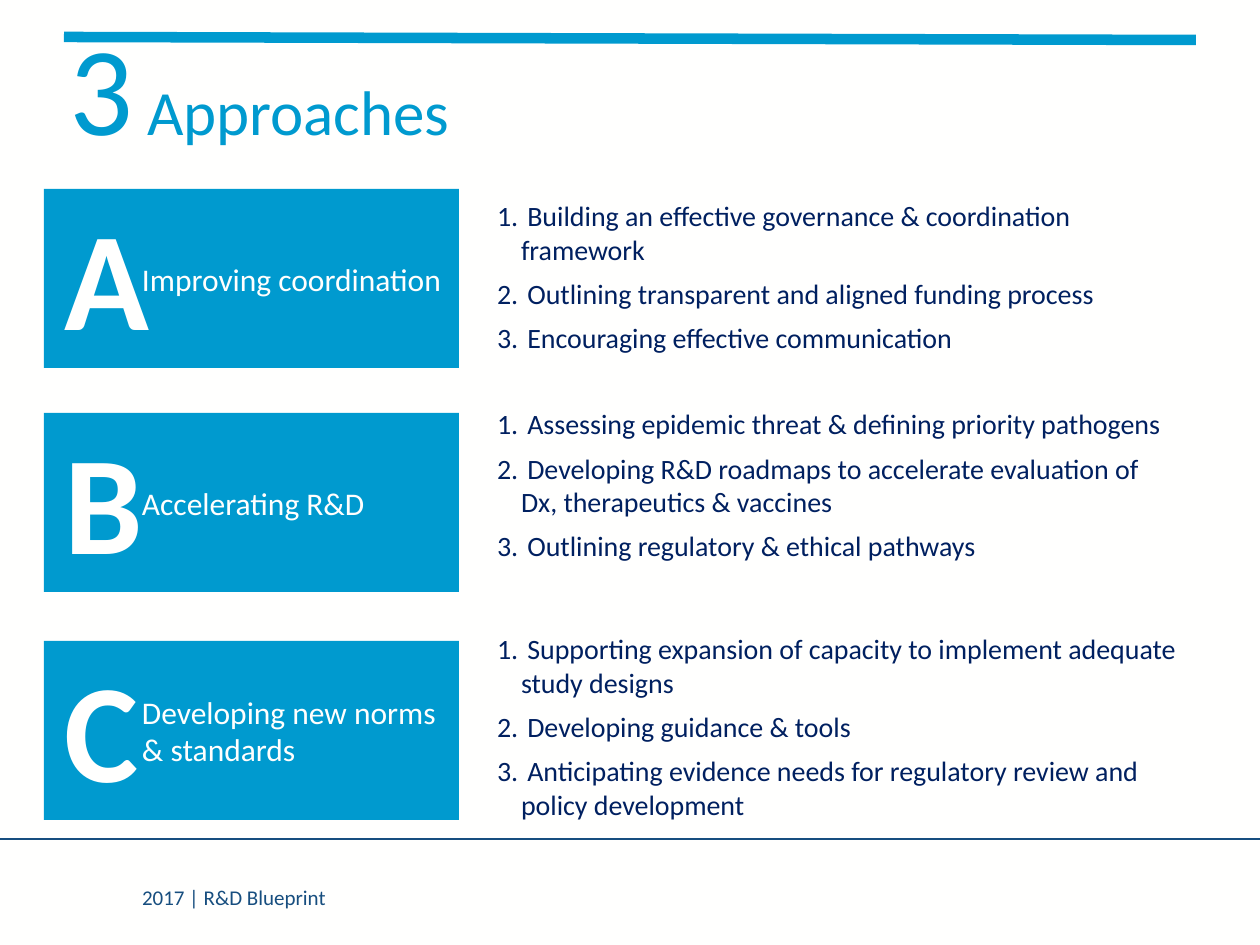
from lxml.etree import SubElement
from pptx import Presentation
from pptx.dml.color import RGBColor
from pptx.enum.shapes import MSO_CONNECTOR as Line, MSO_SHAPE as Shape
from pptx.enum.text import MSO_ANCHOR as Anchor, MSO_AUTO_SIZE as Fit, PP_ALIGN as Align
from pptx.oxml.ns import qn
from pptx.util import Emu, Pt

SCALE = 914400 / 126
BLUE, NAVY, DEEP, WHITE = "009ACF", "002060", "174E7F", "FFFFFE"
FONT = "Calibri"

ROWS = [
    # letter, label, card top, list top, list width, list items
    ("A", "Improving coordination", 189, 193, 685, [
        "Building an effective governance & coordination framework",
        "Outlining transparent and aligned funding process",
        "Encouraging effective communication"]),
    ("B", "Accelerating R&D", 413, 401, 685, [
        "Assessing epidemic threat & defining priority pathogens",
        "Developing R&D roadmaps to accelerate evaluation of Dx, therapeutics & vaccines",
        "Outlining regulatory & ethical pathways"]),
    ("C", "Developing new norms & standards", 641, 626, 710, [
        "Supporting expansion of capacity to implement adequate study designs",
        "Developing guidance & tools",
        "Anticipating evidence needs for regulatory review and policy development"]),
]


def px(n):
    return Emu(round(n * SCALE))


def color(code):
    return RGBColor.from_string(code)


def place(shape, x, y, w, h):
    shape.left, shape.top, shape.width, shape.height = map(px, (x, y, w, h))


def number(para):
    """Give the paragraph a hanging automatic number."""
    props = para._p.get_or_add_pPr()
    props.set("marL", str(px(24)))
    props.set("indent", str(-px(24)))
    SubElement(props, qn("a:buFont"), typeface="+mj-lt")
    SubElement(props, qn("a:buAutoNum"), type="arabicPeriod")


def write(shape, paras, size=16, ink=WHITE, bold=False, anchor=Anchor.TOP,
          inset=(12, 6, 12, 6), after=0, listed=False):
    """Fill the shape; each paragraph is a list of (text, size or None) runs."""
    frame = shape.text_frame
    frame.word_wrap, frame.auto_size = True, Fit.NONE
    frame.vertical_anchor = anchor
    (frame.margin_left, frame.margin_top,
     frame.margin_right, frame.margin_bottom) = map(px, inset)
    for i, runs in enumerate(paras):
        para = frame.add_paragraph() if i else frame.paragraphs[0]
        para.alignment = Align.LEFT
        para.space_before, para.space_after = Pt(0), Pt(after)
        if listed:
            number(para)
        for text, own in runs:
            run = para.add_run()
            run.text = text
            font = run.font
            font.name, font.size, font.bold = FONT, Pt(own or size), bold
            font.color.rgb = color(ink)


def rule(slide, x1, y1, x2, y2, ink, width):
    line = slide.shapes.add_connector(Line.STRAIGHT, *map(px, (x1, y1, x2, y2)))
    line.line.color.rgb = color(ink)
    line.line.width = Pt(width)
    SubElement(line._element.spPr, qn("a:effectLst"))


def header(slide, x, y, w, h):
    rule(slide, x + 7, y, x + w - 4, y + 3, BLUE, 6)
    title = slide.shapes.title
    place(title, x, y, w, h)
    write(title, [[("3", 72), (" Approaches", 36)]], ink=BLUE, anchor=Anchor.MIDDLE)


def card(slide, x, y, w, h, letter, label):
    box = slide.shapes.add_shape(Shape.RECTANGLE, *map(px, (x, y, w, h)))
    box.shadow.inherit = False
    box.fill.solid()
    box.fill.fore_color.rgb = color(BLUE)
    box.line.fill.background()
    write(box, [[(label, None)]], size=18, anchor=Anchor.MIDDLE, inset=(98, 6, 6, 6))
    mark = slide.shapes.add_textbox(*map(px, (x + 21, y - 4, 92, h + 4)))
    write(mark, [[(letter, None)]], size=80, bold=True, inset=(0, 6, 0, 6))


def steps(body, x, y, w, h, items):
    place(body, x, y, w, h)
    write(body, [[(" " + item, None)] for item in items], ink=NAVY,
          inset=(6, 6, 6, 6), after=6, listed=True)


def footer(slide, x, y, w, h):
    rule(slide, 0, y, w, y, DEEP, 1.5)
    note = slide.shapes.add_textbox(*map(px, (x, y + 40, 684, h)))
    write(note, [[("2017 | R&D Blueprint", None)]], size=12, ink=DEEP)


def main():
    deck = Presentation()
    deck.slide_width, deck.slide_height = px(1260), px(945)
    slide = deck.slides.add_slide(deck.slide_layouts.get_by_name("Comparison"))
    back = slide.background.fill
    back.solid()
    back.fore_color.rgb = color(WHITE)

    header(slide, 57, 37, 1143, 97)
    bodies = [p for p in slide.placeholders if p.placeholder_format.idx]
    for body, (letter, label, top, start, width, items) in zip(bodies, ROWS):
        card(slide, 44, top, 415, 179, letter, label)
        steps(body, 491, start, width, 204, items)
    for spare in bodies[len(ROWS):]:
        spare._element.getparent().remove(spare._element)
    footer(slide, 130, 839, 1260, 38)
    deck.save("out.pptx")


if __name__ == "__main__":
    main()
